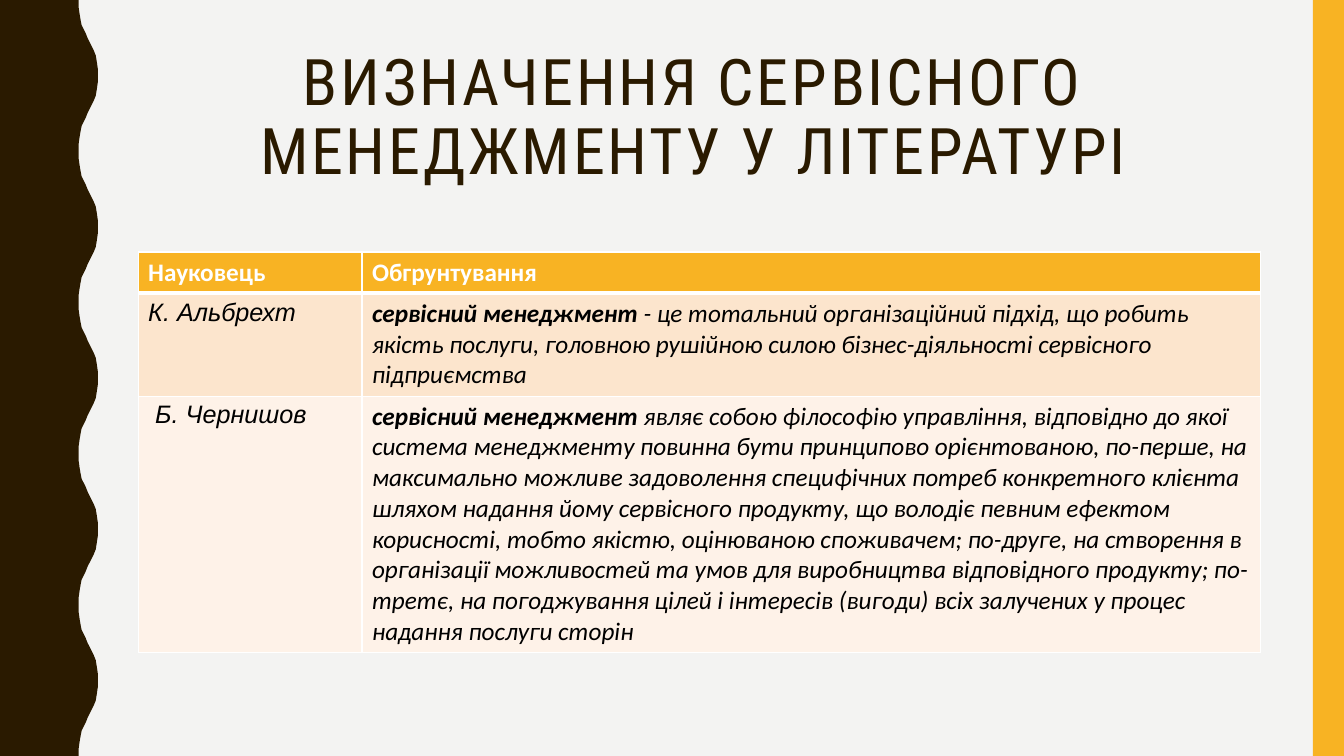
"""Builds a slide with a table of definitions of service management."""
from lxml.etree import SubElement
from pptx import Presentation
from pptx.dml.color import RGBColor
from pptx.enum.shapes import MSO_SHAPE
from pptx.enum.text import MSO_ANCHOR, PP_ALIGN
from pptx.oxml.ns import qn
from pptx.util import Inches, Pt

BACKGROUND = RGBColor(0xF3, 0xF3, 0xF2)
BROWN = RGBColor(0x2A, 0x1A, 0x00)
YELLOW = RGBColor(0xF8, 0xB3, 0x23)
PEACH = RGBColor(0xFC, 0xE5, 0xCD)
CREAM = RGBColor(0xFE, 0xF2, 0xE8)
WHITE = RGBColor(0xFF, 0xFF, 0xFF)
BLACK = RGBColor(0x00, 0x00, 0x00)

TITLE = "ВИЗНАЧЕННЯ СЕРВІСНОГО МЕНЕДЖМЕНТУ У ЛІТЕРАТУРІ"
HEADERS = ("Науковець", "Обгрунтування")
DEFINITIONS = [
    ("К. Альбрехт ", "сервісний менеджмент ",
     "- це тотальний організаційний підхід, що робить якість послуги, "
     "головною рушійною силою бізнес-діяльності сервісного підприємства"),
    (" Б. Чернишов", "сервісний менеджмент ",
     "являє собою філософію управління, відповідно до якої система менеджменту "
     "повинна бути принципово орієнтованою, по-перше, на максимально можливе "
     "задоволення специфічних потреб конкретного клієнта шляхом надання йому "
     "сервісного продукту, що володіє певним ефектом корисності, тобто якістю, "
     "оцінюваною споживачем; по-друге, на створення в організації можливостей "
     "та умов для виробництва відповідного продукту; по-третє, на погоджування "
     "цілей і інтересів (вигоди) всіх залучених у процес надання послуги сторін"),
]
COLUMN_WIDTHS = (2.22, 8.91)
ROW_HEIGHTS = (0.41, 1.02, 2.54)
ROW_FILLS = (YELLOW, PEACH, CREAM)

SLIDE_HEIGHT = 7.5
WAVE_PERIOD = 1.5
WAVE_COUNT = 5
HALF_WAVE = [
    (0.78, 0), (0.78, 0.07), (0.79, 0.14), (0.8, 0.2), (0.81, 0.25),
    (0.83, 0.29), (0.85, 0.33), (0.87, 0.38), (0.89, 0.42), (0.91, 0.46),
    (0.93, 0.5), (0.95, 0.55), (0.96, 0.61), (0.97, 0.68), (0.97, 0.75),
]


def add_text(paragraph, text, *, size=18, font="Calibri", color=BLACK,
             bold=False, italic=False, spacing=0):
    run = paragraph.add_run()
    run.text = text
    run.font.size = Pt(size)
    run.font.name = font
    run.font.color.rgb = color
    run.font.bold = bold
    run.font.italic = italic
    if spacing:
        run.font._element.set("spc", str(spacing * 100))


def paint(shape, color):
    shape.fill.solid()
    shape.fill.fore_color.rgb = color
    shape.line.fill.background()
    shape.shadow.inherit = False


def style_cell(cell, color, top, bottom):
    properties = cell._tc.get_or_add_tcPr()
    for side, width in (("L", 1), ("R", 1), ("T", top), ("B", bottom)):
        line = SubElement(properties, qn(f"a:ln{side}"), w=str(Pt(width)))
        fill = SubElement(line, qn("a:solidFill"))
        SubElement(fill, qn("a:srgbClr"), val=str(WHITE))
    cell.fill.solid()
    cell.fill.fore_color.rgb = color


def add_side_bands(slide):
    wave = HALF_WAVE + [(x, WAVE_PERIOD - y) for x, y in HALF_WAVE[-2::-1]]
    edge = [(x, y + WAVE_PERIOD * index)
            for index in range(WAVE_COUNT) for x, y in wave]
    points = [(Inches(x), Inches(y)) for x, y in edge + [(0, SLIDE_HEIGHT)]]
    builder = slide.shapes.build_freeform(0, 0)
    builder.add_line_segments(points, close=True)
    paint(builder.convert_to_shape(), BROWN)
    stripe = slide.shapes.add_shape(MSO_SHAPE.RECTANGLE, Inches(13.02), 0,
                                    Inches(0.31), Inches(SLIDE_HEIGHT))
    paint(stripe, YELLOW)


def add_title(slide):
    box = slide.shapes.add_textbox(Inches(1.26), Inches(0.42),
                                   Inches(11.24), Inches(1.52))
    frame = box.text_frame
    frame.word_wrap = True
    frame.vertical_anchor = MSO_ANCHOR.MIDDLE
    paragraph = frame.paragraphs[0]
    paragraph.alignment = PP_ALIGN.CENTER
    paragraph.line_spacing = 0.9
    add_text(paragraph, TITLE, size=45.9, font="Roboto Condensed",
             color=BROWN, spacing=2)


def add_definitions(slide):
    table = slide.shapes.add_table(
        len(ROW_HEIGHTS), len(COLUMN_WIDTHS), Inches(1.37), Inches(2.5),
        Inches(sum(COLUMN_WIDTHS)), Inches(sum(ROW_HEIGHTS))).table
    for column, width in zip(table.columns, COLUMN_WIDTHS):
        column.width = Inches(width)
    for index, (row, height) in enumerate(zip(table.rows, ROW_HEIGHTS)):
        row.height = Inches(height)
        for cell in row.cells:
            style_cell(cell, ROW_FILLS[index], top=3 if index == 1 else 1,
                       bottom=3 if index == 0 else 1)
    for cell, header in zip(table.rows[0].cells, HEADERS):
        add_text(cell.text_frame.paragraphs[0], header, color=WHITE, bold=True)
    for index, (scholar, term, meaning) in enumerate(DEFINITIONS, start=1):
        name, definition = (cell.text_frame.paragraphs[0]
                            for cell in table.rows[index].cells)
        add_text(name, scholar, font="Arial", italic=True)
        add_text(definition, term, bold=True, italic=True)
        add_text(definition, meaning, italic=True)


def main():
    presentation = Presentation()
    presentation.slide_width = Inches(13.33)
    presentation.slide_height = Inches(SLIDE_HEIGHT)
    slide = presentation.slides.add_slide(presentation.slide_layouts[6])
    slide.background.fill.solid()
    slide.background.fill.fore_color.rgb = BACKGROUND
    add_side_bands(slide)
    add_title(slide)
    add_definitions(slide)
    presentation.save("out.pptx")


if __name__ == "__main__":
    main()
